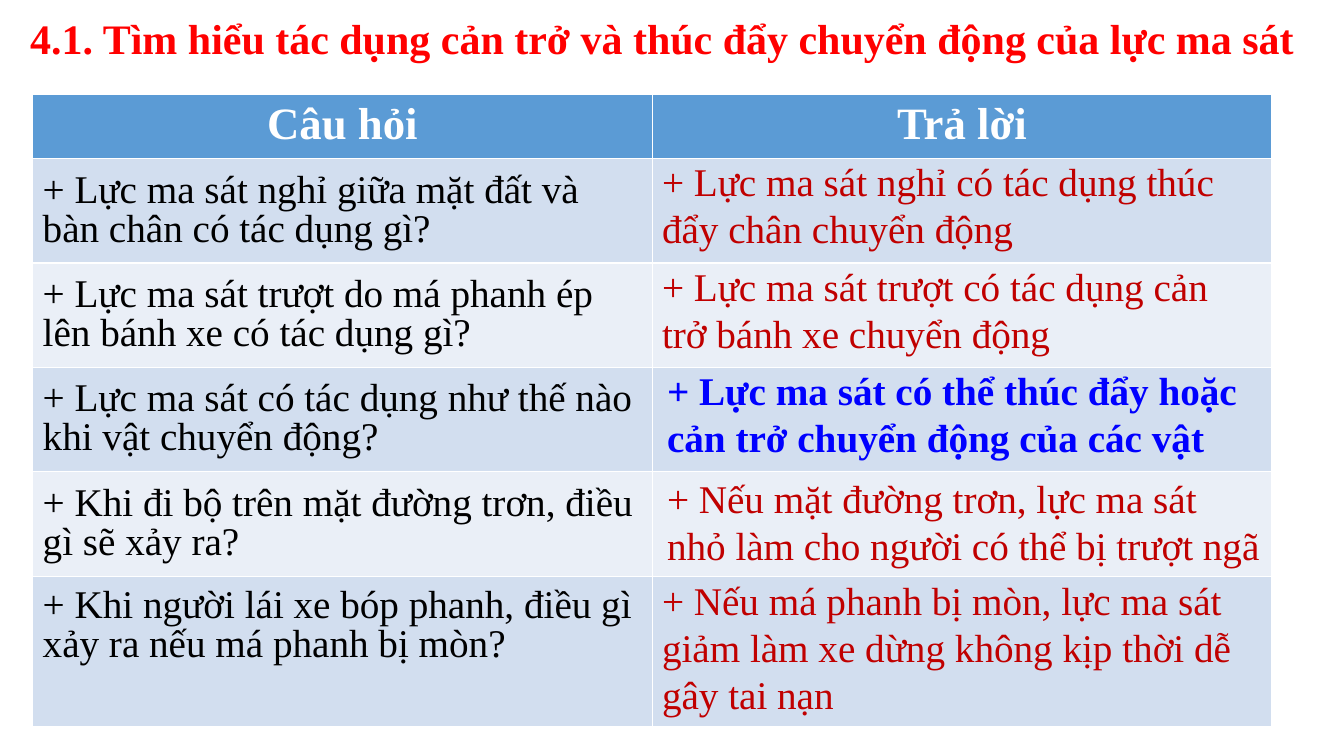
from pptx import Presentation
from pptx.dml.color import RGBColor
from pptx.enum.text import MSO_ANCHOR, MSO_AUTO_SIZE, PP_ALIGN
from pptx.util import Pt

FONT = "Times New Roman"
TITLE = "4.1. Tìm hiểu tác dụng cản trở và thúc đẩy chuyển động của lực ma sát"
HEADERS = ["Câu hỏi", "Trả lời"]
QUESTIONS = [
    "+ Lực ma sát nghỉ giữa mặt đất và bàn chân có tác dụng gì?",
    "+ Lực ma sát trượt do má phanh ép lên bánh xe có tác dụng gì?",
    "+ Lực ma sát có tác dụng như thế nào khi vật chuyển động?",
    "+ Khi đi bộ trên mặt đường trơn, điều gì sẽ xảy ra?",
    "+ Khi người lái xe bóp phanh, điều gì xảy ra nếu má phanh bị mòn?",
]
RED, BLUE = "C00000", "0000FF"
ANSWERS = [
    ("+ Lực ma sát nghỉ có tác dụng thúc đẩy chân chuyển động", 465.8, 108.7, 74.9, RED, False),
    ("+ Lực ma sát trượt có tác dụng cản trở bánh xe chuyển động", 465.8, 183.6, 74.9, RED, False),
    ("+ Lực ma sát có thể thúc đẩy hoặc cản trở chuyển động của các vật", 469.4, 257.8, 74.9, BLUE, True),
    ("+ Nếu mặt đường trơn, lực ma sát nhỏ làm cho người có thể bị trượt ngã", 469.4, 335.5, 74.9, RED, False),
    ("+ Nếu má phanh bị mòn, lực ma sát giảm làm xe dừng không kịp thời dễ gây tai nạn",
     465.8, 408.2, 108.7, RED, False),
]
TABLE_LEFT, TABLE_TOP, COLUMN_WIDTH = 23.3, 67.7, 442.6
ROW_HEIGHTS = [45.4] + [74.6] * 4 + [107.6]
HEADER_FILL, BAND_FILLS = "5B9BD5", ["D2DEEF", "EAEFF7"]
ANSWER_RIGHT = 908.6


def color(value):
    return RGBColor.from_string(value)


def write(text_frame, text, size, text_color, bold=False, align=PP_ALIGN.LEFT, spacing=1.0):
    text_frame.text = text
    paragraph = text_frame.paragraphs[0]
    paragraph.alignment = align
    paragraph.line_spacing = spacing
    font = paragraph.runs[0].font
    font.name, font.size, font.bold = FONT, Pt(size), bold
    font.color.rgb = color(text_color)


def place_title(slide):
    title = slide.shapes.title
    title.left, title.top, title.width, title.height = Pt(14.4), Pt(5), Pt(931.7), Pt(43.9)
    title.text_frame.vertical_anchor = MSO_ANCHOR.TOP
    title.text_frame.auto_size = MSO_AUTO_SIZE.SHAPE_TO_FIT_TEXT
    write(title.text_frame, TITLE, 30, "FF0000", True)


def add_question_table(slide):
    table = slide.shapes.add_table(
        len(ROW_HEIGHTS), len(HEADERS), Pt(TABLE_LEFT), Pt(TABLE_TOP),
        Pt(COLUMN_WIDTH * len(HEADERS)), Pt(sum(ROW_HEIGHTS))).table
    for row, height in zip(table.rows, ROW_HEIGHTS):
        row.height = Pt(height)
    for column, header in enumerate(HEADERS):
        table.columns[column].width = Pt(COLUMN_WIDTH)
        write(table.cell(0, column).text_frame, header, 32, "FFFFFF", True, PP_ALIGN.CENTER)
        for row in range(len(ROW_HEIGHTS)):
            fill = table.cell(row, column).fill
            fill.solid()
            fill.fore_color.rgb = color(BAND_FILLS[(row - 1) % 2] if row else HEADER_FILL)
    for row, question in enumerate(QUESTIONS, start=1):
        cell = table.cell(row, 0)
        cell.vertical_anchor = MSO_ANCHOR.MIDDLE
        write(cell.text_frame, question, 28, "000000", spacing=0.9)
    cell.vertical_anchor = MSO_ANCHOR.TOP
    cell.margin_top = Pt(8)


def add_answers(slide):
    for text, left, top, height, text_color, bold in ANSWERS:
        box = slide.shapes.add_textbox(Pt(left), Pt(top), Pt(ANSWER_RIGHT - left), Pt(height))
        box.text_frame.word_wrap = True
        box.text_frame.auto_size = MSO_AUTO_SIZE.SHAPE_TO_FIT_TEXT
        write(box.text_frame, text, 28, text_color, bold)


def main():
    presentation = Presentation()
    presentation.slide_width, presentation.slide_height = Pt(960), Pt(540)
    slide = presentation.slides.add_slide(presentation.slide_layouts[5])
    place_title(slide)
    add_question_table(slide)
    add_answers(slide)
    presentation.save("out.pptx")


if __name__ == "__main__":
    main()
